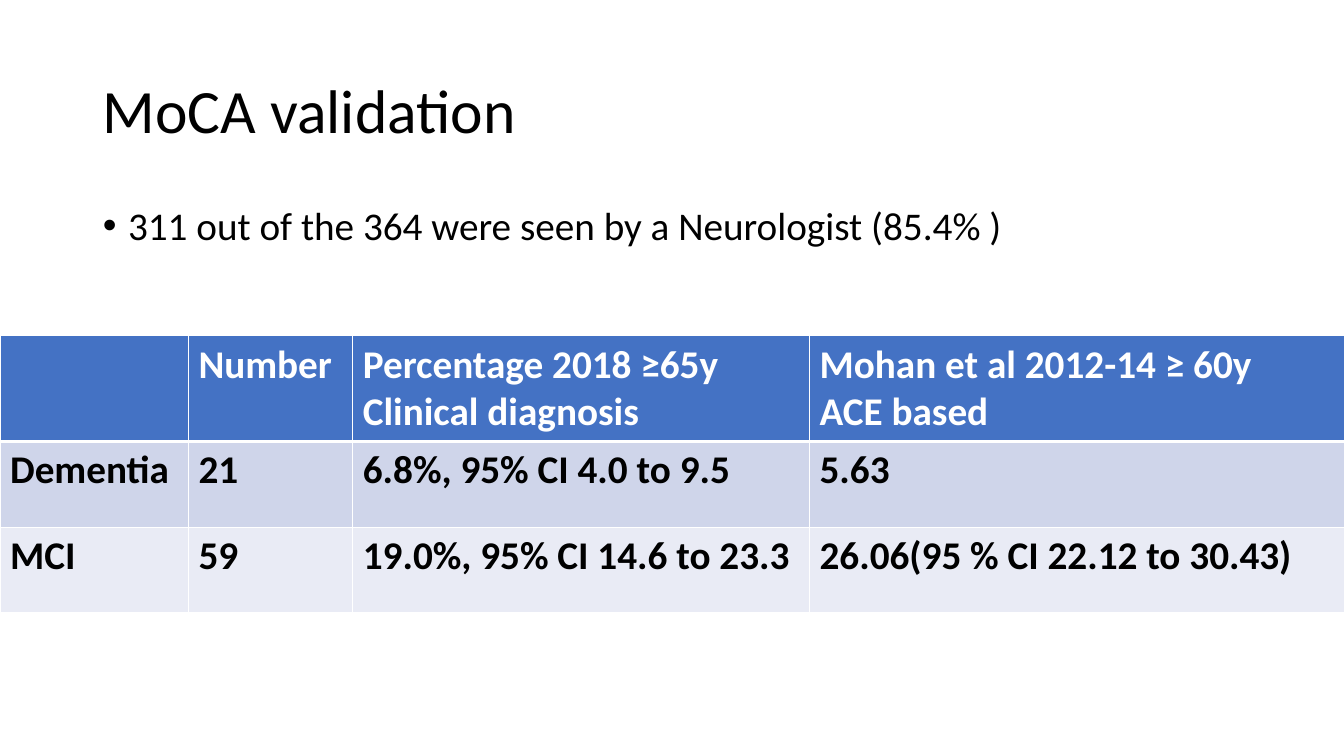
"""Build the MoCA validation slide with its bullet and results table."""
from lxml import etree
from pptx import Presentation
from pptx.dml.color import RGBColor
from pptx.enum.text import MSO_ANCHOR, MSO_AUTO_SIZE, PP_ALIGN
from pptx.oxml.ns import qn
from pptx.util import Inches, Pt

LEFT = PP_ALIGN.LEFT
MIDDLE = MSO_ANCHOR.MIDDLE
NO_FIT = MSO_AUTO_SIZE.NONE
FONT = "Calibri"
BLACK, WHITE = "000000", "FFFFFF"
ROW_FILLS = ["4472C4", "CFD5EA", "E9EBF5"]
ROW_HEIGHTS = [1.03, 0.85, 0.85]
COL_WIDTHS = [1.87, 1.63, 4.53, 5.89]
ROWS = [
    ["", "Number", "Percentage 2018 ≥65y\nClinical diagnosis",
     "Mohan et al 2012-14 ≥ 60y\nACE based"],
    ["Dementia", "21", "6.8%, 95% CI 4.0 to 9.5", "5.63"],
    ["MCI", "59", "19.0%, 95% CI 14.6 to 23.3", "26.06(95 % CI 22.12 to 30.43)"],
]


def style(p, size, color, bold=False):
    p.alignment = LEFT
    p.font.name = FONT
    p.font.size = Pt(size)
    p.font.bold = bold
    p.font.color.rgb = RGBColor.from_string(color)


def add_border(cell, side, width):
    tcPr = cell._tc.get_or_add_tcPr()
    ln = etree.SubElement(tcPr, qn(f"a:ln{side}"), w=str(Pt(width)))
    fill = etree.SubElement(ln, qn("a:solidFill"))
    etree.SubElement(fill, qn("a:srgbClr"), val=WHITE)


prs = Presentation()
prs.slide_width, prs.slide_height = Inches(13.33), Inches(7.5)
s = prs.slides.add_slide(prs.slide_layouts[1])
title, body = s.shapes.title, s.placeholders[1]

for sp, text, top, height, size in [
    (title, "MoCA validation", 0.4, 1.45, 44),
    (body, "311 out of the 364 were seen by a Neurologist (85.4% )", 2, 4.76, 28),
]:
    sp.left, sp.top = Inches(0.92), Inches(top)
    sp.width, sp.height = Inches(11.5), Inches(height)
    tf = sp.text_frame
    tf.text = text
    tf.auto_size = NO_FIT
    p = tf.paragraphs[0]
    p.line_spacing = 0.9
    style(p, size, BLACK)

title.text_frame.vertical_anchor = MIDDLE
p = body.text_frame.paragraphs[0]
p.space_before = Pt(10)
pPr = p._p.get_or_add_pPr()
pPr.set("marL", str(Inches(0.25)))
pPr.set("indent", str(Inches(-0.25)))

table = s.shapes.add_table(len(ROWS), len(COL_WIDTHS), Inches(0), Inches(3.33),
                           Inches(sum(COL_WIDTHS)), Inches(sum(ROW_HEIGHTS))).table
for col, width in zip(table.columns, COL_WIDTHS):
    col.width = Inches(width)
for i, texts in enumerate(ROWS):
    table.rows[i].height = Inches(ROW_HEIGHTS[i])
    for j, text in enumerate(texts):
        cell = table.cell(i, j)
        cell.text = text
        for side in "LRTB":
            header_edge = (i, side) in [(0, "B"), (1, "T")]
            add_border(cell, side, 3 if header_edge else 1)
        cell.fill.solid()
        cell.fill.fore_color.rgb = RGBColor.from_string(ROW_FILLS[i])
        for p in cell.text_frame.paragraphs:
            style(p, 28, WHITE if i == 0 else BLACK, True)

prs.save("out.pptx")
